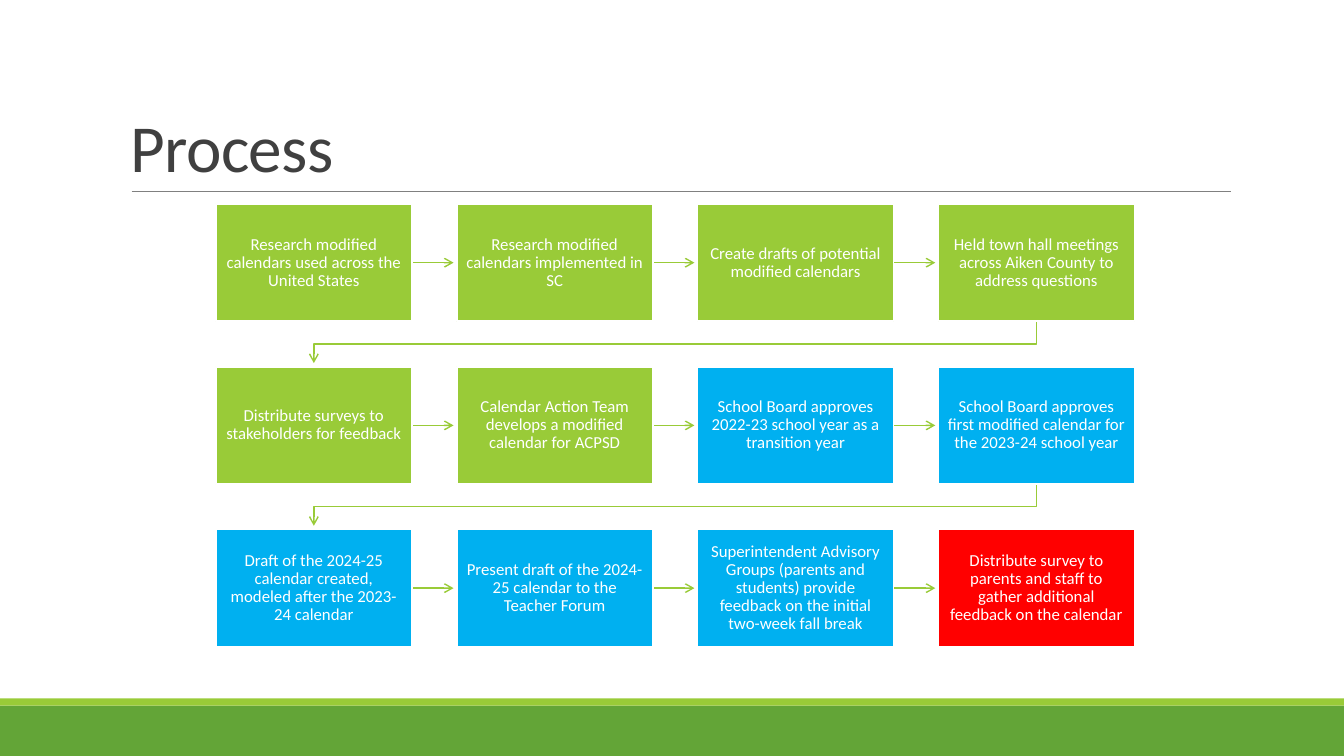
from dataclasses import dataclass

from lxml import etree
from pptx import Presentation
from pptx import util as u
from pptx.dml.color import RGBColor
from pptx.enum import shapes, text
from pptx.oxml import ns

FONT = "Calibri"
LIME = RGBColor(0x99, 0xCB, 0x38)
GREEN = RGBColor(0x63, 0xA5, 0x37)
BLUE = RGBColor(0x00, 0xB0, 0xF0)
RED = RGBColor(0xFF, 0x00, 0x00)
WHITE = RGBColor(0xFF, 0xFF, 0xFF)
GRAY = RGBColor(0x80, 0x80, 0x80)
DARK = RGBColor(0x40, 0x40, 0x40)

# Grid of steps, in centimetres
COLUMNS = 4
LEFT, TOP = 5.44, 5.14
BOX_WIDTH, BOX_HEIGHT = 4.94, 2.96
COLUMN_PITCH, ROW_PITCH = 6.07, 4.1
ARROW_LENGTH, ELBOW_DROP = 1.05, 0.57
INSET = 0.23


@dataclass(frozen=True)
class Step:
    label: str
    color: RGBColor


@dataclass(frozen=True)
class Band:
    top: float
    height: float
    color: RGBColor


BANDS = [Band(17.78, 1.27, GREEN), Band(17.6, 0.18, LIME)]

STEPS = [
    Step("Research modified calendars used across the United States", LIME),
    Step("Research modified calendars implemented in SC", LIME),
    Step("Create drafts of potential modified calendars", LIME),
    Step("Held town hall meetings across Aiken County to address questions", LIME),
    Step("Distribute surveys to stakeholders for feedback", LIME),
    Step("Calendar Action Team develops a modified calendar for ACPSD", LIME),
    Step("School Board approves 2022-23 school year as a transition year", BLUE),
    Step("School Board approves first modified calendar for the 2023-24 school year", BLUE),
    Step("Draft of the 2024-25 calendar created, modeled after the 2023-24 calendar", BLUE),
    Step("Present draft of the 2024-25 calendar to the Teacher Forum", BLUE),
    Step("Superintendent Advisory Groups (parents and students) provide feedback "
         "on the initial two-week fall break", BLUE),
    Step("Distribute survey to parents and staff to gather additional feedback "
         "on the calendar", RED),
]


def add_rectangle(page, left: float, top: float, width: float, height: float,
                  color: RGBColor):
    box = page.shapes.add_shape(shapes.MSO_SHAPE.RECTANGLE, u.Cm(left), u.Cm(top),
                                u.Cm(width), u.Cm(height))
    box.shadow.inherit = False
    box.fill.solid()
    box.fill.fore_color.rgb = color
    box.line.fill.background()
    return box


def add_line(page, start: tuple[float, float], end: tuple[float, float],
             color: RGBColor, points: float):
    line = page.shapes.add_connector(shapes.MSO_CONNECTOR.STRAIGHT,
                                     *map(u.Cm, start + end))
    line.line.color.rgb = color
    line.line.width = u.Pt(points)
    etree.SubElement(line._element.spPr, ns.qn("a:effectLst"))
    return line


def add_arrowhead(shape) -> None:
    outline = shape.line._get_or_add_ln()
    etree.SubElement(outline, ns.qn("a:tailEnd"), type="arrow")


def add_return_arrow(page, x: float, y: float) -> None:
    """Lead from the bottom of the last column to the first box of the next row."""
    first_x = x - (COLUMNS - 1) * COLUMN_PITCH
    builder = page.shapes.build_freeform(u.Cm(x), u.Cm(y))
    corners = [(x, y + ELBOW_DROP), (first_x, y + ELBOW_DROP),
               (first_x, y + ARROW_LENGTH)]
    builder.add_line_segments([(u.Cm(cx), u.Cm(cy)) for cx, cy in corners], close=False)
    arrow = builder.convert_to_shape()
    arrow.shadow.inherit = False
    arrow.fill.background()
    arrow.line.color.rgb = LIME
    arrow.line.width = u.Pt(1)
    add_arrowhead(arrow)


def add_step(page, index: int, step: Step) -> None:
    """Draw one box and the arrow to the step that follows it."""
    row, column = divmod(index, COLUMNS)
    left, top = LEFT + column * COLUMN_PITCH, TOP + row * ROW_PITCH
    right, middle = left + BOX_WIDTH, top + BOX_HEIGHT / 2

    if column < COLUMNS - 1:
        add_arrowhead(add_line(page, (right, middle), (right + ARROW_LENGTH, middle),
                               LIME, 1))
    elif index < len(STEPS) - 1:
        add_return_arrow(page, left + BOX_WIDTH / 2, top + BOX_HEIGHT)

    box = add_rectangle(page, left, top, BOX_WIDTH, BOX_HEIGHT, step.color)
    box.line.color.rgb = WHITE
    box.line.width = u.Pt(1.25)
    frame = box.text_frame
    frame.word_wrap = True
    frame.vertical_anchor = text.MSO_ANCHOR.MIDDLE
    frame.margin_left = frame.margin_right = u.Cm(INSET)
    frame.margin_top = frame.margin_bottom = u.Cm(INSET)
    para = frame.paragraphs[0]
    para.text = step.label
    para.alignment = text.PP_ALIGN.CENTER
    para.line_spacing = 0.9
    para.font.name = FONT
    para.font.size = u.Pt(12)
    para.font.color.rgb = WHITE


def add_title(page, title: str) -> None:
    box = page.shapes.add_textbox(u.Cm(3.05), u.Cm(0.79), u.Cm(27.94), u.Cm(4.04))
    frame = box.text_frame
    frame.word_wrap = True
    frame.vertical_anchor = text.MSO_ANCHOR.BOTTOM
    para = frame.paragraphs[0]
    para.line_spacing = 0.85
    para.font.name = FONT
    para.font.size = u.Pt(48)
    para.font.color.rgb = DARK
    span = para.add_run()
    span.text = title
    span.font._element.set("spc", "-50")


def main() -> None:
    deck = Presentation()
    deck.slide_width, deck.slide_height = u.Cm(33.87), u.Cm(19.05)
    page = deck.slides.add_slide(deck.slide_layouts[6])
    for band in BANDS:
        add_rectangle(page, 0, band.top, 33.87, band.height, band.color)
    add_line(page, (3.32, 4.83), (31.01, 4.83), GRAY, 0.5)
    add_title(page, "Process")
    for index, step in enumerate(STEPS):
        add_step(page, index, step)
    deck.save("out.pptx")


if __name__ == "__main__":
    main()
